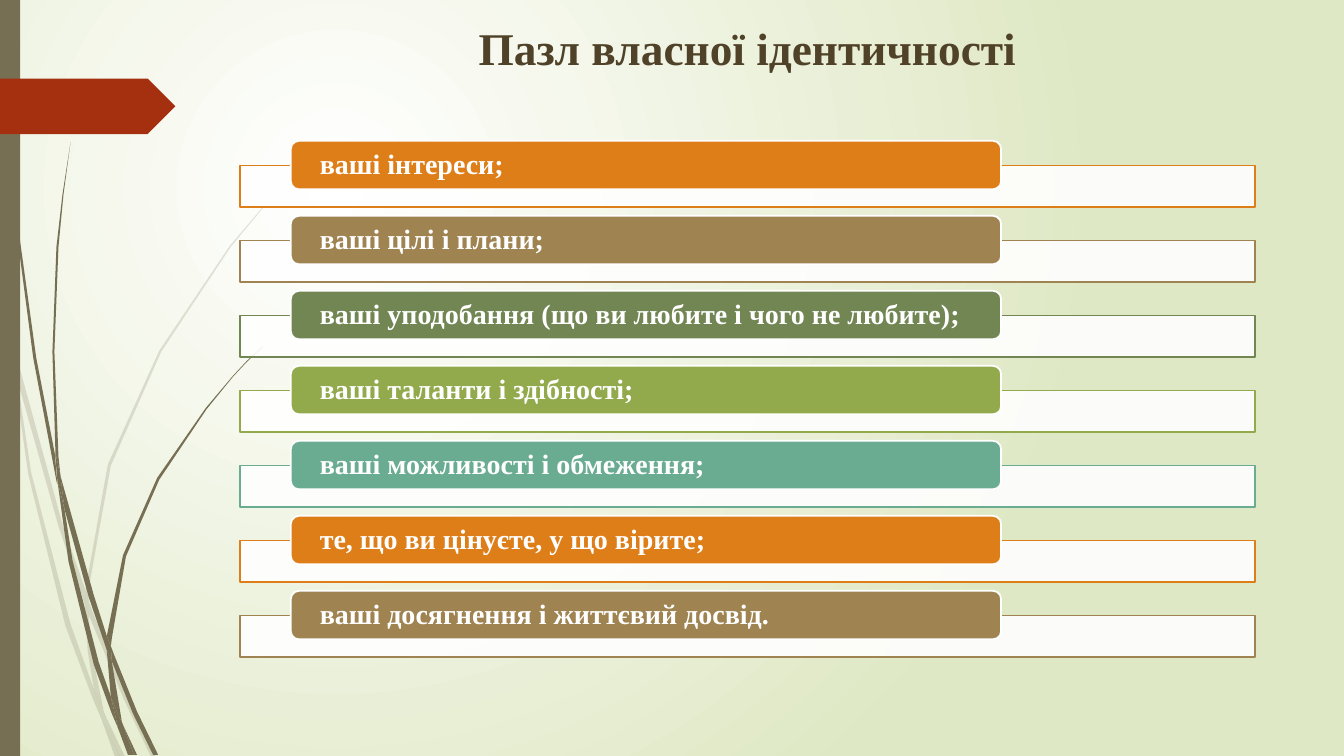
import pptx
import pptx.util
import pptx.dml.color
import pptx.enum.shapes
import pptx.enum.text
import pptx.oxml
import pptx.oxml.ns

Cm = pptx.util.Cm
SHAPE = pptx.enum.shapes.MSO_SHAPE
ALIGN = pptx.enum.text.PP_ALIGN
ANCHOR = pptx.enum.text.MSO_ANCHOR

TITLE = "Пазл власної ідентичності"
ITEMS = [
    "ваші інтереси;",
    "ваші цілі і плани;",
    "ваші уподобання (що ви любите і чого не любите);",
    "ваші таланти і здібності;",
    "ваші можливості і обмеження;",
    "те, що ви цінуєте, у що вірите;",
    "ваші досягнення і життєвий досвід.",
]

THEME = {
    "font": "Times New Roman",
    "title_size": 32.4,
    "item_size": 20,
    "title": "504228",
    "white": "FFFFFF",
    "backdrop": "DFE8C4",
    "grass": "766F54",
    "arrow": "A53010",
    "accents": ["DE7E18", "9F8351", "728653", "92AA4C", "6AAC91"],
}

# Outlines of the blade pieces, in units of GRASS_UNIT centimetres
GRASS_UNIT = 2.54
PALE_GRASS = [
    [(.11, 3.5), (.09, 3.22), (0, 2.82), (0, 2.99), (.1, 3.44)],
    [(.58, 5.22), (.84, 5.99), (.85, 5.86), (.62, 5.2), (.14, 3.45), (.17, 3.76)],
    [(.92, 6.07), (.88, 5.96), (.88, 6.1), (1.23, 6.94), (1.5, 7.51), (1.55, 7.51),
     (1.27, 6.92)],
    [(1.19, 7.51), (1.24, 7.51), (1.05, 7.11)],
    [(.93, 6.83), (.7, 6.19), (.31, 4.69), (.17, 3.76), (.11, 3.5), (.28, 4.7),
     (.65, 6.21), (.92, 6.93), (1.01, 7.14), (.99, 7.07)],
    [(.84, 5.99), (.87, 6.46), (.93, 6.83), (.96, 6.92), (1.05, 7.11), (1.03, 7.06),
     (.91, 6.46), (.88, 6.1), (.88, 6.08)],
    [(.88, 5.84), (1.1, 4.62), (1.6, 3.49), (2.29, 2.45), (2.68, 1.98), (2.9, 1.75),
     (3.12, 1.54), (3.12, 1.53), (2.89, 1.75), (2.68, 1.97), (2.28, 2.44),
     (1.58, 3.48), (1.07, 4.61), (.85, 5.84), (.85, 5.86), (.88, 5.96)],
    [(1.01, 7.14), (1.14, 7.51), (1.19, 7.51)],
    [(.88, 6.08), (.88, 6.1), (.88, 5.96), (.85, 5.86), (.84, 5.99)],
    [(.96, 6.92), (.93, 6.83), (.99, 7.07), (1.01, 7.14), (1.19, 7.51), (1.05, 7.11)],
]
DARK_GRASS = [
    [(.07, 1.1), (.17, 2.33), (.33, 3.55), (.56, 4.77), (.57, 4.81), (.55, 4.57),
     (.55, 4.53), (.36, 3.55), (.19, 2.32), (.08, 1.09), (.05, .48), (.04, 0),
     (.03, 0), (.04, .48)],
    [(.88, 5.92), (1.06, 6.45), (1.06, 6.31), (.93, 5.9), (.6, 4.72), (.64, 5.05)],
    [(1.13, 6.49), (1.1, 6.41), (1.11, 6.56), (1.32, 7.08), (1.52, 7.49),
     (1.57, 7.49), (1.36, 7.06)],
    [(1.1, 6.91), (.98, 6.57), (.72, 5.56), (.64, 5.05), (.57, 4.77), (.68, 5.57),
     (.93, 6.59), (1.11, 7.08), (1.17, 7.22), (1.16, 7.17)],
    [(.6, 4.72), (.58, 4.53), (.54, 3.49), (.58, 2.45), (.63, 1.93), (.7, 1.41),
     (.62, 1.93), (.56, 2.45), (.52, 3.49), (.55, 4.49)],
    [(1.33, 7.49), (1.36, 7.49), (1.22, 7.19)],
    [(.57, 4.77), (.64, 5.05), (.6, 4.72), (.55, 4.49), (.55, 4.53)],
    [(1.11, 6.33), (1.25, 5.52), (1.58, 4.76), (2.05, 4.06), (2.31, 3.74),
     (2.45, 3.59), (2.61, 3.44), (2.6, 3.44), (2.45, 3.58), (2.31, 3.73),
     (2.04, 4.05), (1.56, 4.74), (1.22, 5.51), (1.06, 6.31), (1.1, 6.41)],
    [(1.17, 7.22), (1.27, 7.49), (1.31, 7.49)],
    [(1.06, 6.45), (1.1, 6.91), (1.16, 7.06), (1.22, 7.19), (1.21, 7.16),
     (1.11, 6.56), (1.09, 6.51)],
    [(1.06, 6.45), (1.09, 6.51), (1.11, 6.56), (1.1, 6.41), (1.06, 6.31)],
    [(1.16, 7.06), (1.1, 6.91), (1.16, 7.17), (1.17, 7.22), (1.3, 7.49),
     (1.33, 7.49), (1.22, 7.19)],
]

SLIDE_W, SLIDE_H = 33.87, 19.05
ROW_TOP, ROW_STEP = 3.55, 1.89
PILL_X, PILL_W, PILL_H = 7.33, 17.9, 1.22
BAR_X, BAR_W, BAR_H, BAR_DROP = 6.05, 25.57, 1.04, .62


def rgb(color):
    return pptx.dml.color.RGBColor.from_string(color)


def paint(sp, color, line=None, opacity=100):
    sp.shadow.inherit = False
    sp.fill.solid()
    sp.fill.fore_color.rgb = rgb(color)
    if opacity < 100:
        clr = sp._element.spPr.find(".//" + pptx.oxml.ns.qn("a:srgbClr"))
        alpha = pptx.oxml.parse_xml(
            f'<a:alpha {pptx.oxml.ns.nsdecls("a")} val="{opacity * 1000}"/>')
        clr.append(alpha)
    if line:
        sp.line.color.rgb = rgb(line)
        sp.line.width = pptx.util.Pt(1.25)
    else:
        sp.line.fill.background()


def add_box(s, kind, x, y, w, h, color, **look):
    sp = s.shapes.add_shape(kind, Cm(x), Cm(y), Cm(w), Cm(h))
    paint(sp, color, **look)
    return sp


def add_blade_piece(s, points, opacity):
    outline = [(Cm(x * GRASS_UNIT), Cm(y * GRASS_UNIT)) for x, y in points]
    builder = s.shapes.build_freeform(*outline[0])
    builder.add_line_segments(outline[1:], close=True)
    paint(builder.convert_to_shape(), THEME["grass"], opacity=opacity)


def write(sp, text, size, color, align=ALIGN.LEFT, anchor=ANCHOR.MIDDLE,
          side=.25, top=0, spacing=1.0):
    tf = sp.text_frame
    tf.word_wrap = True
    tf.vertical_anchor = anchor
    tf.margin_left = tf.margin_right = Cm(side)
    tf.margin_top, tf.margin_bottom = Cm(top), 0
    p = tf.paragraphs[0]
    p.alignment, p.line_spacing = align, spacing
    r = p.add_run()
    r.text = text
    r.font.name, r.font.size, r.font.bold = THEME["font"], pptx.util.Pt(size), True
    r.font.color.rgb = rgb(color)


def set_backdrop(s):
    """Circular gradient centred a quarter of the way in."""
    fill = s.background.fill
    fill.gradient()
    for stop, color, pos in zip(fill.gradient_stops,
                                (THEME["white"], THEME["backdrop"]), (0, 1)):
        stop.color.rgb, stop.position = rgb(color), pos
    lin = s._element.find(".//" + pptx.oxml.ns.qn("a:lin"))
    circle = pptx.oxml.parse_xml(
        f'<a:path {pptx.oxml.ns.nsdecls("a")} path="circle">'
        '<a:fillToRect l="50000" t="50000" r="100000" b="100000"/></a:path>')
    lin.getparent().replace(lin, circle)


def main():
    prs = pptx.Presentation()
    prs.slide_width, prs.slide_height = Cm(SLIDE_W), Cm(SLIDE_H)
    s = prs.slides.add_slide(prs.slide_layouts[6])
    set_backdrop(s)

    for pieces, opacity in ((PALE_GRASS, 20), (DARK_GRASS, 100)):
        for points in pieces:
            add_blade_piece(s, points, opacity)
    add_box(s, SHAPE.RECTANGLE, 0, 0, .51, SLIDE_H, THEME["grass"])
    add_box(s, SHAPE.PENTAGON, 0, 1.98, 4.42, 1.4, THEME["arrow"])

    title = s.shapes.add_textbox(Cm(6.45), Cm(.38), Cm(24.77), Cm(2.03))
    write(title, TITLE, THEME["title_size"], THEME["title"],
          align=ALIGN.CENTER, anchor=ANCHOR.TOP, top=.14)

    accents = THEME["accents"]
    for i, item in enumerate(ITEMS):
        y = ROW_TOP + i * ROW_STEP
        accent = accents[i % len(accents)]
        add_box(s, SHAPE.RECTANGLE, BAR_X, y + BAR_DROP, BAR_W, BAR_H,
                THEME["white"], line=accent, opacity=90)
        pill = add_box(s, SHAPE.ROUNDED_RECTANGLE, PILL_X, y, PILL_W, PILL_H,
                       accent, line=THEME["white"])
        write(pill, item, THEME["item_size"], THEME["white"], side=.67, spacing=.9)

    prs.save("out.pptx")


if __name__ == "__main__":
    main()
